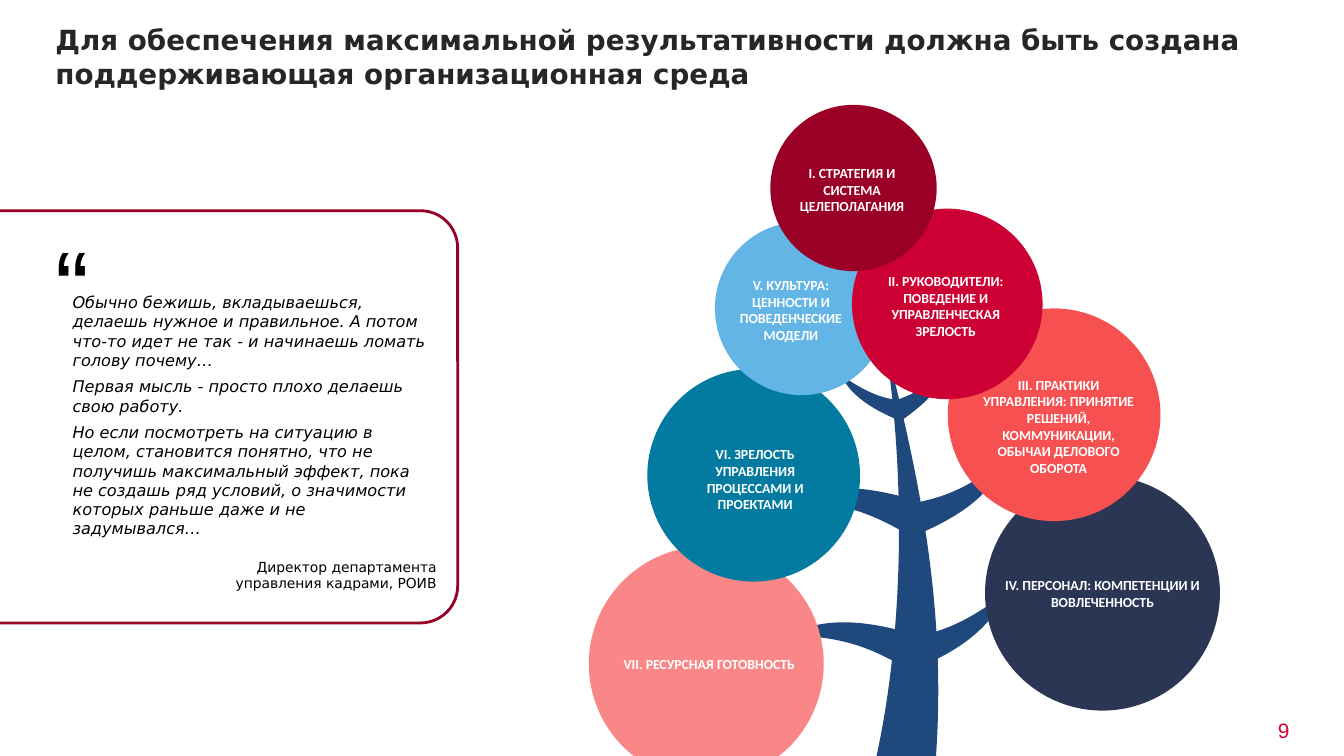
import collections

import lxml.etree
import pptx
import pptx.dml.color
import pptx.enum.shapes
import pptx.enum.text
import pptx.oxml.ns
import pptx.util

Inches = pptx.util.Inches
Color = pptx.dml.color.RGBColor
Kind = pptx.enum.shapes.MSO_SHAPE
Align = pptx.enum.text.PP_ALIGN
Anchor = pptx.enum.text.MSO_ANCHOR
Box = collections.namedtuple("Box", "left top width height")
Circle = collections.namedtuple("Circle", "left top size color label label_box")

WHITE = Color(0xFF, 0xFF, 0xFF)
BLACK = Color(0x00, 0x00, 0x00)
CHARCOAL = Color(0x26, 0x26, 0x26)
PAGE_RED = Color(0xD9, 0x00, 0x35)
FRAME_RED = Color(0x97, 0x00, 0x26)
WOOD = Color(0x1F, 0x49, 0x7D)
PINK = Color(0xF9, 0x87, 0x87)
NAVY = Color(0x2A, 0x36, 0x54)
CORAL = Color(0xF6, 0x50, 0x50)
TEAL = Color(0x03, 0x7A, 0x9F)
SKY = Color(0x62, 0xB5, 0xE5)
RED = Color(0xCC, 0x00, 0x33)
BURGUNDY = Color(0x9A, 0x00, 0x25)

TITLE_FORMAT = {"name": "DejaVu Sans", "size": 19.8, "bold": True, "color": CHARCOAL}
QUOTE_FORMAT = {"name": "DejaVu Sans", "size": 11.5, "italic": True, "color": BLACK}
AUTHOR_FORMAT = {"name": "DejaVu Sans", "size": 9.9, "color": BLACK}
MARK_FORMAT = {"name": "Arial", "size": 72.7, "color": BLACK}
LABEL_FORMAT = {"name": "Calibri", "size": 9.9, "bold": True, "color": WHITE}
NUMBER_FORMAT = {"name": "Arial", "size": 14.9, "color": PAGE_RED}

TITLE = ("Для обеспечения максимальной результативности должна быть создана "
         "поддерживающая организационная среда")
QUOTE = [
    "Обычно бежишь, вкладываешься, делаешь нужное и правильное. "
    "А потом что-то идет не так - и начинаешь ломать голову почему…",
    "Первая мысль - просто плохо делаешь свою работу.",
    "Но если посмотреть на ситуацию в целом, становится понятно, что не "
    "получишь максимальный эффект, пока не создашь ряд условий, о значимости "
    "которых раньше даже и не задумывался…",
]
AUTHOR = "Директор департамента управления кадрами, РОИВ"

LARGE_LEFT = [(3.09, 4.22), (2.76, 4.04), (2.52, 3.95), (1.99, 3.93),
              (2.39, 3.72), (2.84, 3.82), (3.12, 3.89)]
LARGE_RIGHT = [(3.12, 3.97), (3.49, 3.91), (3.72, 3.83), (4.15, 3.51),
               (3.97, 3.93), (3.56, 4.13), (3.29, 4.25)]
SMALL_RIGHT = [(3.02, 2.94), (3.23, 2.87), (3.36, 2.8), (3.57, 2.58),
               (3.51, 2.84), (3.23, 3.04), (3.09, 3.14)]
SMALL_LEFT = [(3.12, 2.94), (2.9, 2.91), (2.76, 2.86), (2.5, 2.68),
              (2.61, 2.92), (2.89, 3.05), (3.05, 3.12)]
TRUNK = [(2.69, 7.08), (3.09, 5.82), (3.19, 4.02), (2.94, 2.37),
         (3.35, 3.96), (3.61, 5.38), (3.38, 7.08)]
LOWER_TIER = (-0.01, 1.33)
LIMBS = [(LARGE_LEFT, (0, 0)), (LARGE_RIGHT, (0, 0)), (SMALL_RIGHT, (0, 0)),
         (SMALL_LEFT, (0, 0)), (LARGE_RIGHT, LOWER_TIER),
         (LARGE_LEFT, LOWER_TIER), (TRUNK, (0, 0))]

CIRCLES = [
    Circle(0, 4.38, 2.33, PINK, "VII. РЕСУРСНАЯ ГОТОВНОСТЬ",
           Box(0.23, 5.46, 1.93, 0.17)),
    Circle(3.93, 3.68, 2.33, NAVY, "IV. ПЕРСОНАЛ: КОМПЕТЕНЦИИ И ВОВЛЕЧЕННОСТЬ",
           Box(4.11, 4.68, 1.97, 0.33)),
    Circle(3.56, 2.02, 2.11, CORAL,
           "III. ПРАКТИКИ УПРАВЛЕНИЯ: ПРИНЯТИЕ РЕШЕНИЙ, КОММУНИКАЦИИ, "
           "ОБЫЧАИ ДЕЛОВОГО ОБОРОТА", Box(3.86, 2.69, 1.6, 1)),
    Circle(0.58, 2.62, 2.11, TEAL, "VI. ЗРЕЛОСТЬ УПРАВЛЕНИЯ ПРОЦЕССАМИ И ПРОЕКТАМИ",
           Box(0.85, 3.38, 1.6, 0.67)),
    Circle(1.25, 1.16, 1.72, SKY, "V. КУЛЬТУРА: ЦЕННОСТИ И ПОВЕДЕНЧЕСКИЕ МОДЕЛИ",
           Box(1.43, 1.7, 1.15, 0.67)),
    Circle(2.61, 1.03, 1.89, RED, "II. РУКОВОДИТЕЛИ: ПОВЕДЕНИЕ И УПРАВЛЕНЧЕСКАЯ ЗРЕЛОСТЬ",
           Box(2.85, 1.66, 1.38, 0.67)),
    Circle(1.8, 0, 1.65, BURGUNDY, "I. СТРАТЕГИЯ И СИСТЕМА ЦЕЛЕПОЛАГАНИЯ",
           Box(1.95, 0.59, 1.32, 0.5)),
]


def inside(box, left, top, width, height):
    return Box(box.left + left, box.top + top, width, height)


def add_text(page, box, texts, values, align=Align.LEFT, anchor=Anchor.TOP, gap=0):
    frame = page.shapes.add_textbox(*map(Inches, box)).text_frame
    frame.word_wrap = True
    frame.vertical_anchor = anchor
    for side in ("left", "top", "right", "bottom"):
        setattr(frame, f"margin_{side}", 0)
    for index, text in enumerate(texts):
        para = frame.paragraphs[0] if index == 0 else frame.add_paragraph()
        para.alignment = align
        para.space_after = pptx.util.Pt(gap)
        span = para.add_run()
        span.text = text
        for key, value in values.items():
            if key == "color":
                span.font.color.rgb = value
            else:
                setattr(span.font, key, pptx.util.Pt(value) if key == "size" else value)


def paint(shape, color):
    shape.shadow.inherit = False
    shape.fill.solid()
    shape.fill.fore_color.rgb = color
    shape.line.fill.background()


def bend(shape):
    name = pptx.oxml.ns.qn
    lines = list(shape.element.iter(name("a:lnTo")))
    for first in range(0, len(lines), 3):
        curve = lxml.etree.Element(name("a:cubicBezTo"))
        lines[first].addprevious(curve)
        for line in lines[first:first + 3]:
            curve.append(line[0])
            line.getparent().remove(line)


def add_limb(page, box, outline, shift):
    points = [(Inches(box.left + shift[0] + x), Inches(box.top + shift[1] + y))
              for x, y in outline]
    builder = page.shapes.build_freeform(*points[0])
    builder.add_line_segments(points[1:], close=True)
    limb = builder.convert_to_shape()
    bend(limb)
    paint(limb, WOOD)


def add_tree(page, box):
    for outline, shift in LIMBS:
        add_limb(page, box, outline, shift)
    for circle in CIRCLES:
        place = inside(box, circle.left, circle.top, circle.size, circle.size)
        paint(page.shapes.add_shape(Kind.OVAL, *map(Inches, place)), circle.color)
        add_text(page, inside(box, *circle.label_box), [circle.label], LABEL_FORMAT,
                 Align.CENTER, Anchor.MIDDLE)


def add_quote(page, box):
    panel = page.shapes.add_shape(Kind.ROUNDED_RECTANGLE, *map(Inches, box))
    panel.adjustments[0] = 0.09
    panel.shadow.inherit = False
    panel.fill.background()
    panel.line.color.rgb = FRAME_RED
    panel.line.width = pptx.util.Pt(2)
    add_text(page, inside(box, 1.21, 0.81, 3.53, 2.48), QUOTE, QUOTE_FORMAT, gap=5)
    add_text(page, inside(box, 1.04, 0.11, 0.33, 1.22), ["“"], MARK_FORMAT)
    add_text(page, inside(box, 2.27, 3.45, 2.55, 0.33), [AUTHOR], AUTHOR_FORMAT,
             Align.RIGHT)


def add_title(page, box):
    add_text(page, box, [TITLE], TITLE_FORMAT, anchor=Anchor.MIDDLE)


def add_page_number(page, box):
    add_text(page, box, ["9"], NUMBER_FORMAT, Align.RIGHT)


def main():
    deck = pptx.Presentation()
    deck.slide_width = Inches(13.33)
    deck.slide_height = Inches(7.5)
    page = deck.slides.add_slide(deck.slide_layouts[6])
    add_page_number(page, Box(9.72, 7.12, 3.07, 0.25))
    add_title(page, Box(0.55, 0.28, 12.19, 0.56))
    add_tree(page, Box(5.84, 1.04, 6.26, 7.08))
    add_quote(page, Box(-0.49, 2.09, 5.03, 4.09))
    deck.save("out.pptx")


if __name__ == "__main__":
    main()
